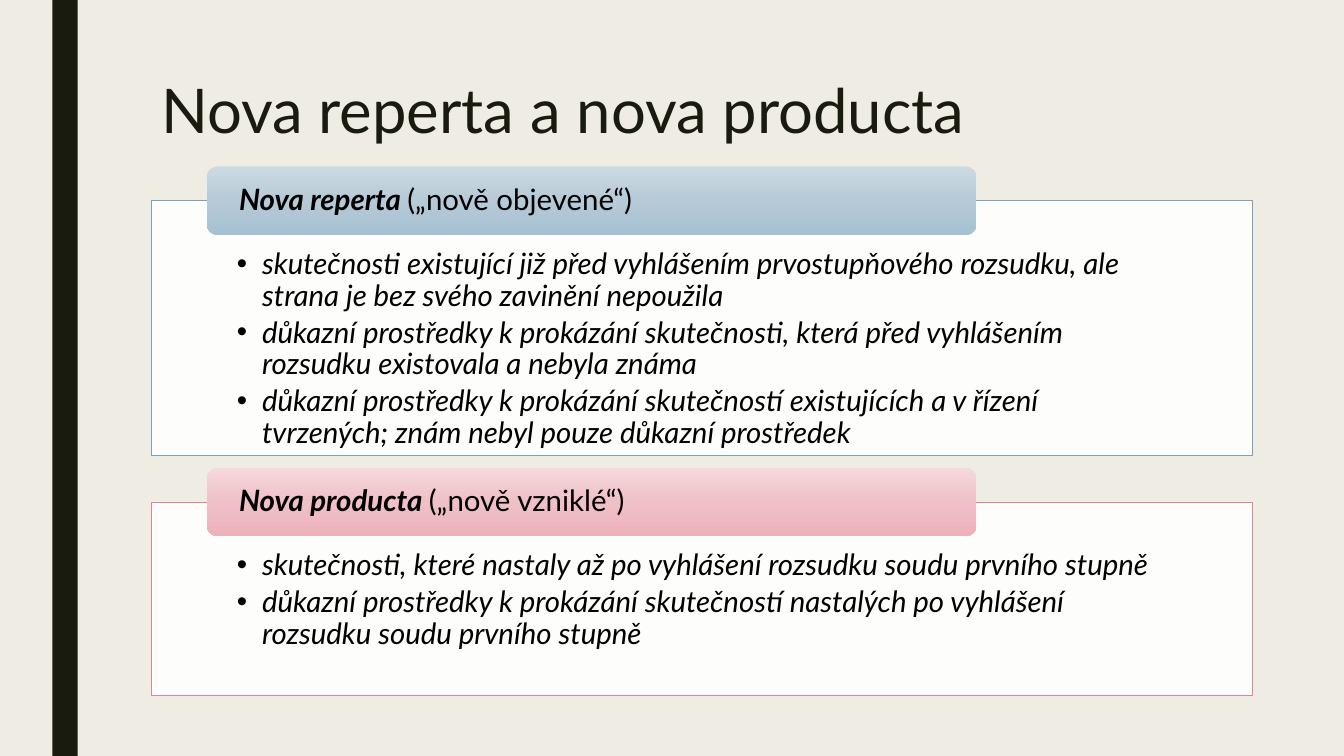
from lxml import etree
from pptx import Presentation, util as u
from pptx.dml.color import RGBColor
from pptx.enum import shapes, text
from pptx.oxml.ns import qn

Pt = u.Pt
FONT = "Lato"
COLORS = {"background": "EFEDE3", "dark": "191B0E", "panel": "FFFFFF", "text": "000000"}
TITLE = "Nova reperta a nova producta"
SECTIONS = [
    {
        "term": "Nova reperta ", "meaning": "(„nově objevené“)",
        "top": 143.28, "height": 182.16, "line": "77A2BB",
        "gradient": ["CCDAE3", "B6CAD7", "A7C1D2"],
        "points": [
            "skutečnosti existující již před vyhlášením prvostupňového rozsudku, ale "
            "strana je bez svého zavinění nepoužila",
            "důkazní prostředky k prokázání skutečnosti, která před vyhlášením "
            "rozsudku existovala a nebyla známa",
            "důkazní prostředky k prokázání skutečností existujících a v řízení "
            "tvrzených; znám nebyl pouze důkazní prostředek",
        ],
    },
    {
        "term": "Nova producta ", "meaning": "(„nově vzniklé“)",
        "top": 358.56, "height": 138.24, "line": "E28394",
        "gradient": ["F6D9DD", "EFC0C7", "EEB2BB"],
        "points": [
            "skutečnosti, které nastaly až po vyhlášení rozsudku soudu prvního stupně",
            "důkazní prostředky k prokázání skutečností nastalých po vyhlášení "
            "rozsudku soudu prvního stupně",
        ],
    },
]
SLIDE_W, SLIDE_H = 960, 540
PANEL_X, PANEL_W = 108, 786.24
HEADER_X, HEADER_W, HEADER_H = 147.6, 550.08, 48.96
BODY_SIZE, TITLE_SIZE = 21, 44
BULLET_INDENT = 18


def rgb(value):
    return RGBColor.from_string(value)


def add_box(s, kind, x, y, w, h, fill=None):
    sp = s.shapes.add_shape(kind, Pt(x), Pt(y), Pt(w), Pt(h))
    sp.shadow.inherit = False
    sp.line.fill.background()
    if fill:
        sp.fill.solid()
        sp.fill.fore_color.rgb = rgb(fill)
    return sp


def set_frame(sp, left, top, right, bottom, anchor):
    tf = sp.text_frame
    tf.word_wrap = True
    tf.margin_left, tf.margin_top = Pt(left), Pt(top)
    tf.margin_right, tf.margin_bottom = Pt(right), Pt(bottom)
    tf.vertical_anchor = anchor
    return tf


def format_paragraph(p, spacing=0.9):
    p.alignment = text.PP_ALIGN.LEFT
    p.line_spacing = spacing


def add_run(p, words, size=BODY_SIZE, color=COLORS["text"], bold=False, italic=False):
    r = p.add_run()
    r.text = words
    r.font.name, r.font.size = FONT, Pt(size)
    r.font.bold, r.font.italic = bold, italic
    r.font.color.rgb = rgb(color)


def add_bullet(p):
    pPr = p._p.get_or_add_pPr()
    pPr.set("marL", str(Pt(BULLET_INDENT)))
    pPr.set("indent", str(-Pt(BULLET_INDENT)))
    etree.SubElement(pPr, qn("a:buFont")).set("typeface", "Arial")
    etree.SubElement(pPr, qn("a:buChar")).set("char", "•")


def set_vertical_gradient(sp, colors):
    """Fill with evenly spaced stops, first colour at the top."""
    sp.fill.gradient()
    sp.fill.gradient_angle = 270
    stops = sp._element.spPr.find(qn("a:gradFill")).find(qn("a:gsLst"))
    for stop in list(stops):
        stops.remove(stop)
    for i, color in enumerate(colors):
        stop = etree.SubElement(stops, qn("a:gs"))
        stop.set("pos", str(100000 * i // (len(colors) - 1)))
        etree.SubElement(stop, qn("a:srgbClr")).set("val", color)


def add_panel(s, section):
    sp = add_box(s, shapes.MSO_SHAPE.RECTANGLE, PANEL_X, section["top"],
                 PANEL_W, section["height"], COLORS["panel"])
    color = sp._element.spPr.find(qn("a:solidFill")).find(qn("a:srgbClr"))
    etree.SubElement(color, qn("a:alpha")).set("val", "90000")
    sp.line.color.rgb = rgb(section["line"])
    sp.line.width = Pt(0.5)
    tf = set_frame(sp, 61.2, 34.56, 61.2, 11.52, text.MSO_ANCHOR.TOP)
    for i, point in enumerate(section["points"]):
        p = tf.add_paragraph() if i else tf.paragraphs[0]
        format_paragraph(p)
        p.space_after = Pt(3.8)
        add_bullet(p)
        add_run(p, point, italic=True)


def add_header(s, section):
    sp = add_box(s, shapes.MSO_SHAPE.ROUNDED_RECTANGLE, HEADER_X,
                 section["top"] - HEADER_H / 2, HEADER_W, HEADER_H)
    set_vertical_gradient(sp, section["gradient"])
    # The rounded corners add about 2.4 pt to these margins
    tf = set_frame(sp, 20.8, 0, 20.8, 0, text.MSO_ANCHOR.MIDDLE)
    p = tf.paragraphs[0]
    format_paragraph(p)
    add_run(p, section["term"], bold=True, italic=True)
    add_run(p, section["meaning"])


def main():
    prs = Presentation()
    prs.slide_width, prs.slide_height = Pt(SLIDE_W), Pt(SLIDE_H)
    s = prs.slides.add_slide(prs.slide_layouts[6])
    s.background.fill.solid()
    s.background.fill.fore_color.rgb = rgb(COLORS["background"])
    add_box(s, shapes.MSO_SHAPE.RECTANGLE, 37.44, 0, 18, SLIDE_H, COLORS["dark"])

    title = s.shapes.add_textbox(Pt(PANEL_X), Pt(54), Pt(756), Pt(116.64))
    tf = set_frame(title, 7.2, 3.6, 7.2, 3.6, text.MSO_ANCHOR.TOP)
    format_paragraph(tf.paragraphs[0], 0.89)
    add_run(tf.paragraphs[0], TITLE, TITLE_SIZE, COLORS["dark"])

    for section in SECTIONS:
        add_panel(s, section)
        add_header(s, section)
    prs.save("out.pptx")


if __name__ == "__main__":
    main()
